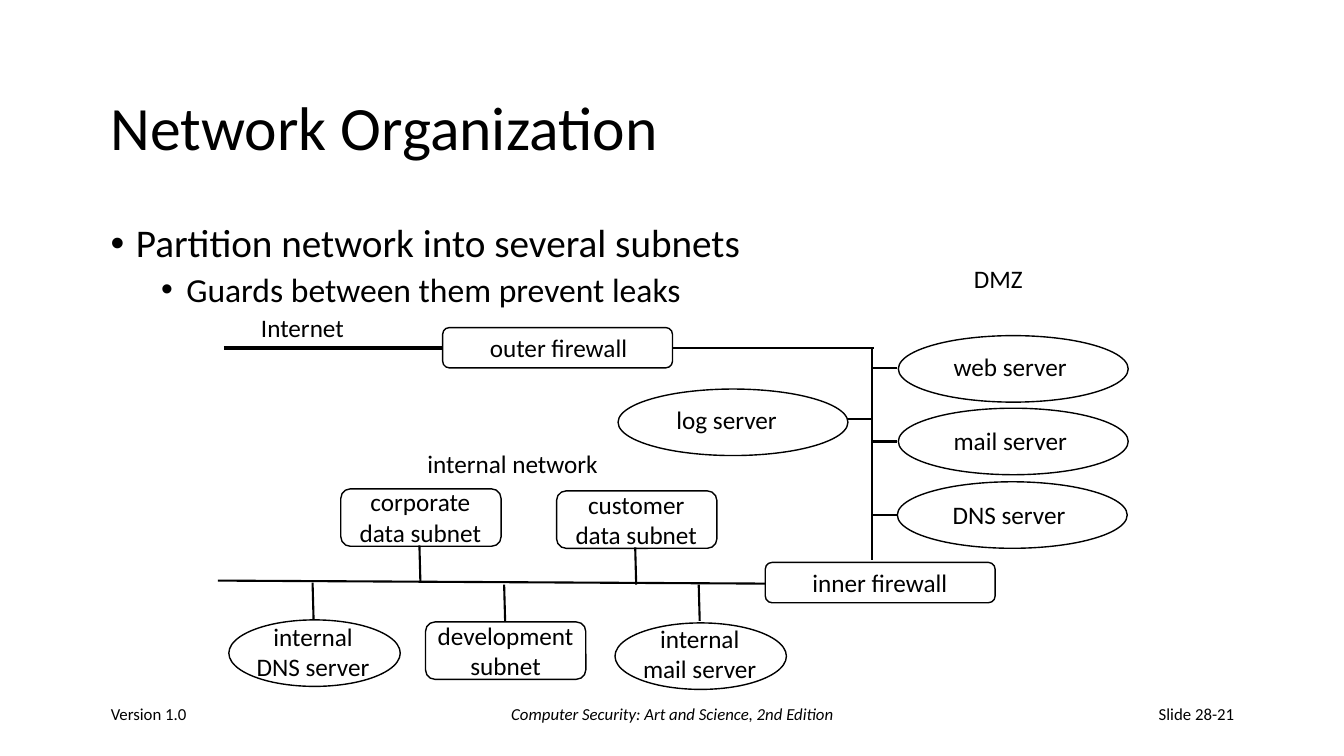
from dataclasses import dataclass

import pptx
import pptx.dml.color
import pptx.enum.shapes
import pptx.enum.text
import pptx.oxml
import pptx.oxml.ns
import pptx.util

PX = 9144  # EMU; 100 px to the inch
ALIGN = pptx.enum.text.PP_ALIGN
ANCHOR = pptx.enum.text.MSO_ANCHOR
ELLIPSE = pptx.enum.shapes.MSO_SHAPE.OVAL
BOX = pptx.enum.shapes.MSO_SHAPE.ROUNDED_RECTANGLE


@dataclass(frozen=True)
class Theme:
    font: str = "Calibri"
    ink: pptx.dml.color.RGBColor = pptx.dml.color.RGBColor(0, 0, 0)
    title: int = 44
    bullet: int = 28
    sub_bullet: int = 24
    label: int = 18
    footer: int = 12
    outline: float = 1
    wire: float = 1.5
    trunk: float = 2.75


@dataclass(frozen=True)
class Node:
    kind: int
    x: int
    y: int
    w: int
    h: int


@dataclass(frozen=True)
class Label:
    text: str
    x: int
    y: int
    w: int


@dataclass(frozen=True)
class Wire:
    x1: int
    y1: int
    x2: int
    y2: int
    weight: float


@dataclass(frozen=True)
class Footer:
    text: str
    x: int
    w: int
    align: int
    italic: bool = False


@dataclass(frozen=True)
class Bullet:
    text: str
    size: int
    indent: int
    before: int


T = Theme()


def px(n: int) -> int:
    return pptx.util.Emu(n * PX)


def style(p, size: int, align=ALIGN.LEFT, italic: bool = False) -> None:
    p.alignment = align
    for r in p.runs:
        r.font.name = T.font
        r.font.size = pptx.util.Pt(size)
        r.font.color.rgb = T.ink
        r.font.italic = italic


def add_text(s, text: str, x: int, y: int, w: int, h: int, size: int,
             align=ALIGN.LEFT, anchor=ANCHOR.TOP, italic: bool = False,
             wrap: bool = True):
    tf = s.shapes.add_textbox(px(x), px(y), px(w), px(h)).text_frame
    tf.word_wrap = wrap
    tf.vertical_anchor = anchor
    tf.text = text
    for p in tf.paragraphs:
        style(p, size, align, italic)
    return tf


def add_bullets(s, bullets: list[Bullet]) -> None:
    tf = add_text(s, "\n".join(b.text for b in bullets), 100, 217, 1133, 217, T.bullet)
    for p, b in zip(tf.paragraphs, bullets):
        pPr = p._p.get_or_add_pPr()
        pPr.set("marL", str(px(b.indent)))
        pPr.set("indent", str(px(-25)))
        for tag, key, value in (("buFont", "typeface", "Arial"), ("buChar", "char", "•")):
            el = pptx.oxml.parse_xml(f'<a:{tag} {pptx.oxml.ns.nsdecls("a")}/>')
            el.set(key, value)
            pPr.append(el)
        p.line_spacing = 0.9
        p.space_before = pptx.util.Pt(b.before)
        style(p, b.size)


def add_node(s, n: Node) -> None:
    sp = s.shapes.add_shape(n.kind, px(n.x), px(n.y), px(n.w), px(n.h))
    sp.shadow.inherit = False
    sp.fill.background()
    sp.line.color.rgb = T.ink
    sp.line.width = pptx.util.Pt(T.outline)


def add_label(s, l: Label) -> None:
    two_lines = "\n" in l.text
    tf = add_text(s, l.text, l.x, l.y, l.w, 71 if two_lines else 40, T.label,
                  ALIGN.CENTER if two_lines else ALIGN.LEFT, wrap=False)
    tf.auto_size = pptx.enum.text.MSO_AUTO_SIZE.SHAPE_TO_FIT_TEXT


def add_wire(s, w: Wire) -> None:
    c = s.shapes.add_connector(pptx.enum.shapes.MSO_CONNECTOR.STRAIGHT,
                               px(w.x1), px(w.y1), px(w.x2), px(w.y2))
    c.line.color.rgb = T.ink
    c.line.width = pptx.util.Pt(w.weight)
    c._element.spPr.append(
        pptx.oxml.parse_xml(f'<a:effectLst {pptx.oxml.ns.nsdecls("a")}/>'))


BULLETS = [
    Bullet("Partition network into several subnets", T.bullet, 25, 0),
    Bullet("Guards between them prevent leaks", T.sub_bullet, 75, 5),
]
FOOTERS = [
    Footer("Version 1.0", 100, 278, ALIGN.LEFT),
    Footer("Computer Security: Art and Science, 2nd Edition", 456, 422, ALIGN.CENTER, True),
    Footer("Slide 28-21", 956, 278, ALIGN.RIGHT),
]
NODES = [
    *(Node(BOX, x, y, 228, 40) for x, y in ((439, 325), (759, 558))),
    *(Node(ELLIPSE, x, y, 228, 66)
      for x, y in ((891, 333), (891, 405), (890, 478), (613, 386))),
    *(Node(BOX, x, y, 159, 57) for x, y in ((338, 485), (552, 487), (422, 617))),
    *(Node(ELLIPSE, x, y, 170, 66) for x, y in ((227, 615), (610, 618))),
]
LABELS = [
    Label("Internet", 249, 305, 103),
    Label("outer firewall", 476, 325, 161),
    Label("DMZ", 956, 256, 69),
    Label("web server", 936, 344, 137),
    Label("mail server", 936, 417, 134),
    Label("DNS server", 935, 490, 133),
    Label("log server", 661, 396, 121),
    Label("inner firewall", 796, 558, 156),
    Label("internal network", 414, 440, 192),
    Label("corporate\ndata subnet", 345, 478, 144),
    Label("customer\ndata subnet", 559, 480, 144),
    Label("internal\nDNS server", 244, 611, 133),
    Label("development\nsubnet", 423, 610, 157),
    Label("internal\nmail server", 627, 613, 134),
]
DMZ_X = 865
WIRES = [
    Wire(222, 345, 439, 345, T.trunk),
    Wire(667, 345, 867, 345, T.wire),
    Wire(DMZ_X, 345, DMZ_X, 556, T.wire),
    Wire(216, 576, 759, 579, T.wire),
    # Taps from the DMZ line to its servers
    *(Wire(DMZ_X, y, DMZ_X + 25, y, T.wire) for y in (365, 438, 511)),
    Wire(DMZ_X - 25, 416, DMZ_X, 416, T.wire),
    # Taps above, then below, the internal line
    *(Wire(x, y, x + 1, y + 37, T.wire) for x, y in ((416, 541), (630, 543))),
    *(Wire(x, y, x + 1, y + 36, T.wire) for x, y in ((310, 578), (500, 580), (693, 580))),
]


def main() -> None:
    prs = pptx.Presentation()
    prs.slide_width, prs.slide_height = px(1333), px(750)
    s = prs.slides.add_slide(prs.slide_layouts[6])

    # Title and bullets
    title = add_text(s, "Network Organization", 100, 67, 1133, 125, T.title,
                     anchor=ANCHOR.MIDDLE)
    title.paragraphs[0].line_spacing = 0.9
    add_bullets(s, BULLETS)

    # Network diagram
    for w in WIRES:
        add_wire(s, w)
    for n in NODES:
        add_node(s, n)
    for l in LABELS:
        add_label(s, l)

    # Footer
    for f in FOOTERS:
        add_text(s, f.text, f.x, 683, f.w, 50, T.footer, f.align, ANCHOR.MIDDLE, f.italic)
    prs.save("out.pptx")


if __name__ == "__main__":
    main()
